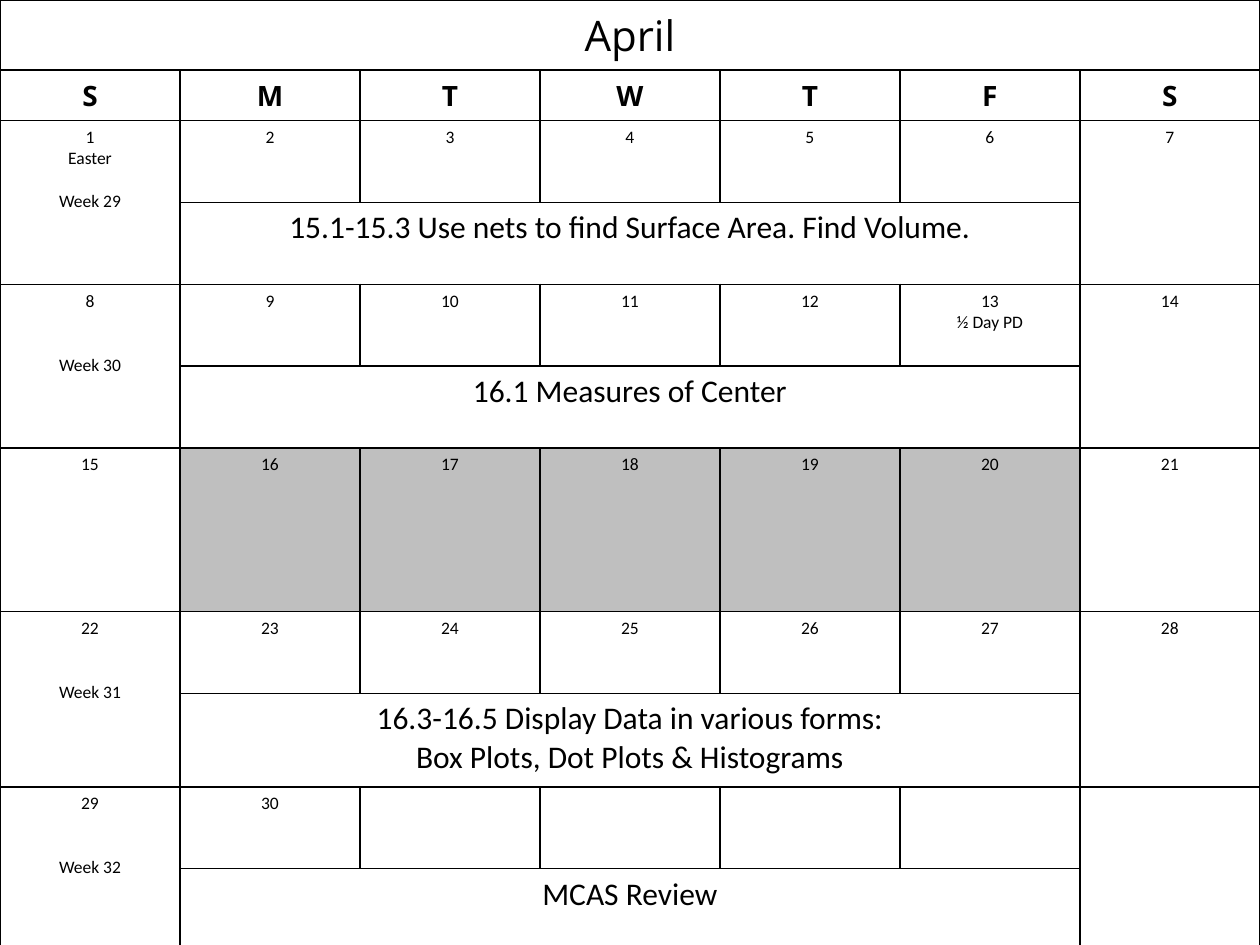
import pptx
import pptx.util
import pptx.dml.color
import pptx.enum.text
import pptx.oxml
import pptx.oxml.ns
from dataclasses import dataclass

Cm = pptx.util.Cm
Pt = pptx.util.Pt
Color = pptx.dml.color.RGBColor.from_string


@dataclass(frozen=True)
class Theme:
    ink: str = "000000"
    paper: str = "FFFFFF"
    off: str = "BFBFBF"
    head: str = "Open Sans"
    body: str = "Calibri"
    title: int = 24
    day: int = 16
    topic: int = 18
    date: int = 10
    line: int = 1
    lead: float = 12.2


THEME = Theme()
MONTH = "April"
DAYS = "SMTWTFS"
LAST = 30
ROWS = [1.35, 1, 1.65, 1.65, 1.65, 1.65, 3.3, 1.65, 1.88, 1.65, 1.65]
WEEKS = [
    ("Week 29", ["15.1-15.3 Use nets to find Surface Area. Find Volume."]),
    ("Week 30", ["16.1 Measures of Center"]),
    (None, None),
    ("Week 31", ["16.3-16.5 Display Data in various forms:",
                 "Box Plots, Dot Plots & Histograms"]),
    ("Week 32", ["MCAS Review"]),
]
NOTES = {1: "Easter", 13: "½ Day PD"}


def frame(cell):
    props = cell._tc.get_or_add_tcPr()
    space = pptx.oxml.ns.nsdecls("a")
    for n, side in enumerate(("lnL", "lnR", "lnT", "lnB")):
        edge = pptx.oxml.parse_xml(
            f'<a:{side} {space} w="{Pt(THEME.line)}"><a:solidFill>'
            f'<a:srgbClr val="{THEME.ink}"/></a:solidFill></a:{side}>')
        props.insert(n, edge)


def paint(cell, color):
    cell.fill.solid()
    cell.fill.fore_color.rgb = Color(color)


def write(cell, lines, size, face=THEME.body, bold=False):
    text = cell.text_frame
    text.text = "\n".join(lines)
    for para in text.paragraphs:
        para.alignment = pptx.enum.text.PP_ALIGN.CENTER
        para.font.size = Pt(size)
        para.font.name = face
        para.font.bold = bold
        para.font.color.rgb = Color(THEME.ink)


def add_grid(slide, width, height):
    shape = slide.shapes.add_table(len(ROWS), len(DAYS), 0, 0, width, height)
    grid = shape.table
    grid.first_row = grid.horz_banding = False
    for col in grid.columns:
        col.width = width // len(DAYS)
    for row, tall in zip(grid.rows, ROWS):
        row.height = Cm(tall)
    for cell in grid.iter_cells():
        paint(cell, THEME.paper)
        frame(cell)
    return grid


def add_head(grid):
    grid.cell(0, 0).merge(grid.cell(0, 6))
    write(grid.cell(0, 0), [MONTH], THEME.title, THEME.head)
    for col, day in enumerate(DAYS):
        write(grid.cell(1, col), [day], THEME.day, THEME.head, True)


def add_week(grid, row, first, label, topic):
    for col in range(7):
        date = first + col
        cell = grid.cell(row, col)
        if date <= LAST:
            lines = [str(date)]
            if date in NOTES:
                lines.append(NOTES[date])
            blank = 3 - len(lines)
            if col == 0 and label:
                lines.append(label)
            write(cell, lines, THEME.date)
            if col == 0 and label:
                cell.text_frame.paragraphs[-1].space_before = Pt(
                    blank * THEME.lead)
        if not topic and 0 < col < 6:
            paint(cell, THEME.off)
    if topic:
        for col in (0, 6):
            grid.cell(row, col).merge(grid.cell(row + 1, col))
        grid.cell(row + 1, 1).merge(grid.cell(row + 1, 5))
        write(grid.cell(row + 1, 1), topic, THEME.topic)


def main():
    deck = pptx.Presentation()
    deck.slide_width, deck.slide_height = Cm(25.4), Cm(19.05)
    slide = deck.slides.add_slide(deck.slide_layouts[6])
    grid = add_grid(slide, deck.slide_width, deck.slide_height)
    add_head(grid)
    row = 2
    for n, (label, topic) in enumerate(WEEKS):
        add_week(grid, row, 1 + 7 * n, label, topic)
        row += 2 if topic else 1
    deck.save("out.pptx")


if __name__ == "__main__":
    main()
